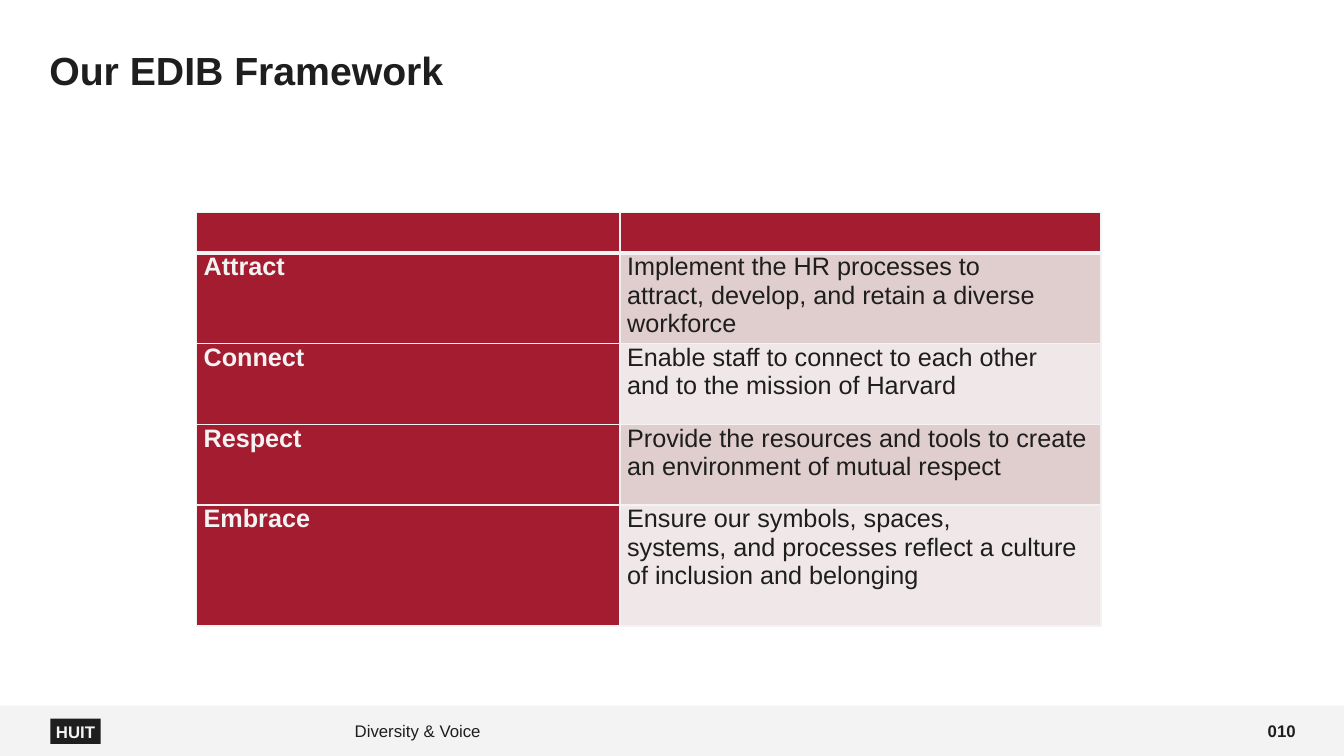
"""Build the EDIB framework slide with its table and footer."""
import pptx
import pptx.dml.color
import pptx.enum.shapes
import pptx.enum.text
import pptx.oxml
import pptx.oxml.ns
import pptx.util
from pptx.util import Inches

TITLE = "Our EDIB Framework"
FOOTER = "Diversity & Voice"
UNIT = "HUIT"
PAGE_NUMBER = "010"
HARD_SPACE = "~"
FRAMEWORK = [
    ("", ""),
    ("Attract", "Implement the HR~processes to attract,~develop, and retain a~diverse workforce"),
    ("Connect", "Enable staff to~connect to each other and~to the mission of Harvard"),
    ("Respect", "Provide the~resources and tools to~create an environment of~mutual respect"),
    ("Embrace", "Ensure our~symbols, spaces, systems,~and processes reflect a~culture of inclusion and~belonging"),
]
COLUMN_WIDTHS = [4.2, 4.77]
ROW_HEIGHTS = [0.4, 0.8, 0.8, 0.8, 1.2]
COLORS = {
    "background": "FFFFFF",
    "ink": "1E1E1E",
    "light": "F3F3F3",
    "crimson": "A41C2F",
    "odd_row": "E0CDCD",
    "even_row": "F0E8E8",
}
ALIGN = pptx.enum.text.PP_ALIGN
MIDDLE = pptx.enum.text.MSO_ANCHOR.MIDDLE


def rgb(name):
    """Return the named colour."""
    return pptx.dml.color.RGBColor.from_string(COLORS[name])


def paint(fill, name):
    """Make a fill solid in the named colour."""
    fill.solid()
    fill.fore_color.rgb = rgb(name)


def write_text(frame, text, size=12, color="ink", bold=False, align=ALIGN.LEFT, line_spacing=None):
    """Write one formatted paragraph into a text frame."""
    frame.word_wrap = True
    paragraph = frame.paragraphs[0]
    paragraph.alignment = align
    if line_spacing:
        paragraph.line_spacing = pptx.util.Pt(line_spacing)
    paragraph.font.size = pptx.util.Pt(size)
    if text:
        run = paragraph.add_run()
        run.text = text.replace(HARD_SPACE, chr(160))
        run.font.name = "Arial"
        run.font.size = pptx.util.Pt(size)
        run.font.bold = bold
        run.font.color.rgb = rgb(color)


def add_rectangle(slide, left, top, width, height, color):
    """Add a flat rectangle without outline."""
    shape = slide.shapes.add_shape(
        pptx.enum.shapes.MSO_SHAPE.RECTANGLE,
        Inches(left), Inches(top), Inches(width), Inches(height),
    )
    shape.shadow.inherit = False
    shape.line.fill.background()
    paint(shape.fill, color)
    return shape


def add_label(slide, left, width, text, **text_format):
    """Add a vertically centred text box in the footer."""
    box = slide.shapes.add_textbox(Inches(left), Inches(7.05), Inches(width), Inches(0.4))
    box.text_frame.vertical_anchor = MIDDLE
    write_text(box.text_frame, text, **text_format)


def set_borders(cell, top=1, bottom=1):
    """Draw light borders of the given point widths around a cell."""
    properties = cell._tc.get_or_add_tcPr()
    widths = {"lnL": 1, "lnR": 1, "lnT": top, "lnB": bottom}
    for position, (side, width) in enumerate(widths.items()):
        border = pptx.oxml.parse_xml(
            f'<a:{side} {pptx.oxml.ns.nsdecls("a")} w="{pptx.util.Pt(width)}">'
            f'<a:solidFill><a:srgbClr val="{COLORS["light"]}"/></a:solidFill></a:{side}>'
        )
        properties.insert(position, border)


def add_framework_table(slide):
    """Add the table of framework goals."""
    table = slide.shapes.add_table(
        len(ROW_HEIGHTS), len(COLUMN_WIDTHS), Inches(1.95), Inches(2.11),
        Inches(sum(COLUMN_WIDTHS)), Inches(sum(ROW_HEIGHTS)),
    ).table
    table.first_col = True
    for column, width in zip(table.columns, COLUMN_WIDTHS):
        column.width = Inches(width)
    for row_index, (row, height) in enumerate(zip(table.rows, ROW_HEIGHTS)):
        row.height = Inches(height)
        is_header = row_index == 0
        for column_index, text in enumerate(FRAMEWORK[row_index]):
            cell = row.cells[column_index]
            is_name = column_index == 0
            band = "odd_row" if row_index % 2 else "even_row"
            paint(cell.fill, "crimson" if is_header or is_name else band)
            if not is_header:
                cell.margin_left = cell.margin_right = Inches(0.07)
                cell.margin_top = cell.margin_bottom = 0
            write_text(cell.text_frame, text, size=18, bold=is_name, color="light" if is_name else "ink")
            set_borders(cell, top=3 if row_index == 1 else 1, bottom=3 if is_header else 1)


def main():
    """Build and save the presentation."""
    presentation = pptx.Presentation()
    presentation.slide_width = Inches(13.33)
    presentation.slide_height = Inches(7.5)
    slide = presentation.slides.add_slide(presentation.slide_layouts[5])
    paint(slide.background.fill, "background")

    add_rectangle(slide, 0, 7, 13.33, 0.5, "light")
    badge = add_rectangle(slide, 0.5, 7.13, 0.5, 0.25, "ink")
    badge.text_frame.margin_left = badge.text_frame.margin_right = 0
    badge.text_frame.vertical_anchor = MIDDLE
    write_text(badge.text_frame, UNIT, color="light", bold=True, align=ALIGN.CENTER)
    add_label(slide, 3.42, 8.8, FOOTER)
    add_label(slide, 12.22, 0.73, PAGE_NUMBER, bold=True, align=ALIGN.RIGHT)

    title = slide.shapes.title
    title.left, title.top = Inches(0.39), Inches(0.28)
    title.width, title.height = Inches(12.47), Inches(0.66)
    title.text_frame.vertical_anchor = MIDDLE
    title.text_frame.auto_size = pptx.enum.text.MSO_AUTO_SIZE.SHAPE_TO_FIT_TEXT
    write_text(title.text_frame, TITLE, size=28, bold=True, line_spacing=45)

    add_framework_table(slide)
    presentation.save("out.pptx")


if __name__ == "__main__":
    main()
